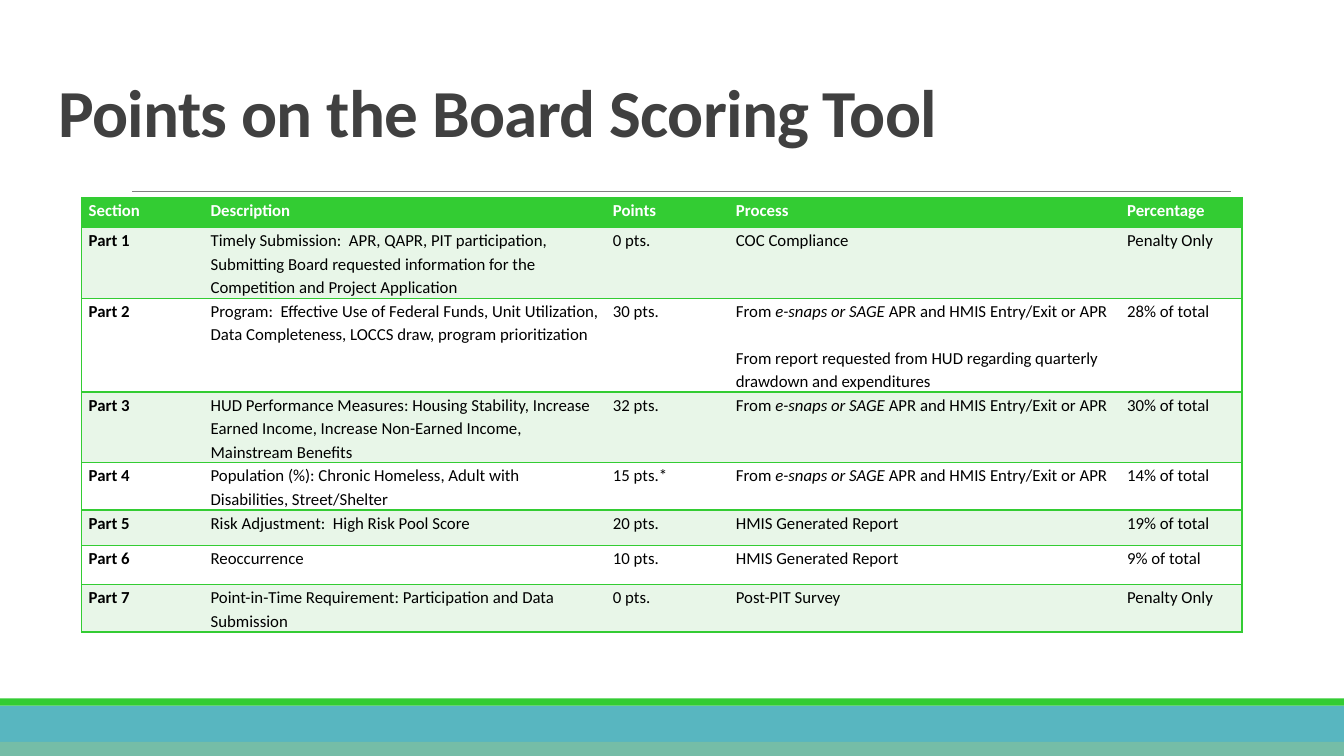
import pptx
import pptx.dml.color
import pptx.enum.shapes
import pptx.enum.text
import pptx.oxml
import pptx.oxml.ns
import pptx.util
from pptx.util import Inches

FONT = "Calibri"
GREEN, TEAL, SAGE_GREEN = "33CC33", "58B6C0", "75BDA7"
PALE_GREEN, WHITE, BLACK, DARK_GRAY, GRAY = "E8F6E8", "FFFFFF", "000000", "404040", "808080"

COLUMN_WIDTHS = [1.21, 3.99, 1.22, 3.88, 1.21]
ROW_HEIGHTS = [0.3, 0.7, 0.93, 0.7, 0.47, 0.35, 0.39, 0.47]

# A cell is a list of paragraphs, a paragraph a list of (text, italic) runs
APR_SOURCE = [("From ", False), ("e-snaps or SAGE ", True),
              ("APR and HMIS Entry/Exit or APR", False)]
DRAWDOWN_SOURCE = [("From report requested from HUD regarding quarterly "
                    "drawdown and expenditures", False)]

ROWS = [
    ["Section", "Description", "Points", "Process", "Percentage"],
    ["Part 1", "Timely Submission:  APR, QAPR, PIT participation, Submitting Board "
     "requested information for the Competition and Project Application",
     "0 pts.", "COC Compliance", "Penalty Only"],
    ["Part 2", "Program:  Effective Use of Federal Funds, Unit Utilization, "
     "Data Completeness, LOCCS draw, program prioritization",
     "30 pts.", [APR_SOURCE, DRAWDOWN_SOURCE], "28% of total"],
    ["Part 3", "HUD Performance Measures: Housing Stability, Increase Earned Income, "
     "Increase Non-Earned Income, Mainstream Benefits",
     "32 pts.", [APR_SOURCE], "30% of total"],
    ["Part 4", "Population (%): Chronic Homeless, Adult with Disabilities, Street/Shelter",
     "15 pts.*", [APR_SOURCE], "14% of total"],
    ["Part 5", "Risk Adjustment:  High Risk Pool Score",
     "20 pts.", "HMIS Generated Report", "19% of total"],
    ["Part 6", "Reoccurrence", "10 pts.", "HMIS Generated Report", "9% of total"],
    ["Part 7", "Point-in-Time Requirement: Participation and Data Submission",
     "0 pts.", "Post-PIT Survey", "Penalty Only"],
]


def color(value):
    return pptx.dml.color.RGBColor.from_string(value)


def add_run(paragraph, text, size, text_color, bold=False, italic=False):
    run = paragraph.add_run()
    run.text = text
    run.font.name = FONT
    run.font.size = pptx.util.Pt(size)
    run.font.bold = bold
    run.font.italic = italic
    run.font.color.rgb = color(text_color)
    return run


def add_band(slide, left, top, width, height, fill):
    band = slide.shapes.add_shape(pptx.enum.shapes.MSO_SHAPE.RECTANGLE, Inches(left),
                                  Inches(top), Inches(width), Inches(height))
    band.shadow.inherit = False
    band.fill.solid()
    band.fill.fore_color.rgb = color(fill)
    band.line.fill.background()


def add_footer(slide, left, top, width):
    add_band(slide, left, top + 0.07, width, 0.5, TEAL)
    add_band(slide, left, top, width, 0.07, GREEN)
    add_band(slide, left, top + 0.43, width, 0.14, SAGE_GREEN)


def add_rule(slide, left, top, width):
    rule = slide.shapes.add_connector(pptx.enum.shapes.MSO_CONNECTOR.STRAIGHT, Inches(left),
                                      Inches(top), Inches(left + width), Inches(top))
    rule.line.color.rgb = color(GRAY)
    rule.line.width = pptx.util.Pt(0.5)
    pptx.oxml.ns.qn("a:effectLst")
    rule._element.spPr.append(pptx.oxml.parse_xml(
        f"<a:effectLst {pptx.oxml.ns.nsdecls('a')}/>"))


def add_title(slide, left, top, width, height):
    box = slide.shapes.add_textbox(Inches(left), Inches(top), Inches(width), Inches(height))
    frame = box.text_frame
    frame.word_wrap = True
    frame.vertical_anchor = pptx.enum.text.MSO_ANCHOR.MIDDLE
    frame.margin_left = frame.margin_right = Inches(0.13)
    frame.margin_top = frame.margin_bottom = Inches(0.13)
    paragraph = frame.paragraphs[0]
    paragraph.line_spacing = 0.85
    run = add_run(paragraph, "Points on the Board Scoring Tool", 48, DARK_GRAY, bold=True)
    run.font._element.set("spc", "-50")


def set_borders(cell, sides):
    """Draw green lines on the named sides and none on the others."""
    properties = cell._tc.get_or_add_tcPr()
    for index, side in enumerate("LRTB"):
        fill = (f'<a:solidFill><a:srgbClr val="{GREEN}"/></a:solidFill>'
                if side in sides else "<a:noFill/>")
        properties.insert(index, pptx.oxml.parse_xml(
            f'<a:ln{side} {pptx.oxml.ns.nsdecls("a")} w="12700">{fill}</a:ln{side}>'))


def fill_cell(cell, content, text_color, bold):
    cell.margin_left = cell.margin_right = Inches(0.07)
    cell.margin_top = cell.margin_bottom = 0
    paragraphs = [[(content, False)]] if isinstance(content, str) else content
    frame = cell.text_frame
    for index, runs in enumerate(paragraphs):
        paragraph = frame.add_paragraph() if index else frame.paragraphs[0]
        paragraph.line_spacing = 1.15
        if index:
            paragraph.space_before = pptx.util.Pt(16.8)
        for text, italic in runs:
            add_run(paragraph, text, 12, text_color, bold, italic)


def add_scoring_table(slide, left, top):
    table = slide.shapes.add_table(
        len(ROWS), len(COLUMN_WIDTHS), Inches(left), Inches(top),
        Inches(sum(COLUMN_WIDTHS)), Inches(sum(ROW_HEIGHTS))).table
    for column, width in zip(table.columns, COLUMN_WIDTHS):
        column.width = Inches(width)
    last_column = len(COLUMN_WIDTHS) - 1
    for row_index, contents in enumerate(ROWS):
        table.rows[row_index].height = Inches(ROW_HEIGHTS[row_index])
        is_header = row_index == 0
        row_fill = GREEN if is_header else PALE_GREEN if row_index % 2 else WHITE
        for column_index, content in enumerate(contents):
            cell = table.cell(row_index, column_index)
            fill_cell(cell, content, WHITE if is_header else BLACK,
                      bold=is_header or column_index == 0)
            cell.fill.solid()
            cell.fill.fore_color.rgb = color(row_fill)
            set_borders(cell, "TB" + {0: "L", last_column: "R"}.get(column_index, ""))


def main():
    presentation = pptx.Presentation()
    presentation.slide_width = Inches(13.33)
    presentation.slide_height = Inches(7.5)
    slide = presentation.slides.add_slide(presentation.slide_layouts[6])
    add_footer(slide, 0, 6.93, 13.33)
    add_rule(slide, 1.31, 1.9, 10.9)
    add_title(slide, 0.45, 0.65, 12.42, 1.03)
    add_scoring_table(slide, 0.81, 1.96)
    presentation.save("out.pptx")


if __name__ == "__main__":
    main()
